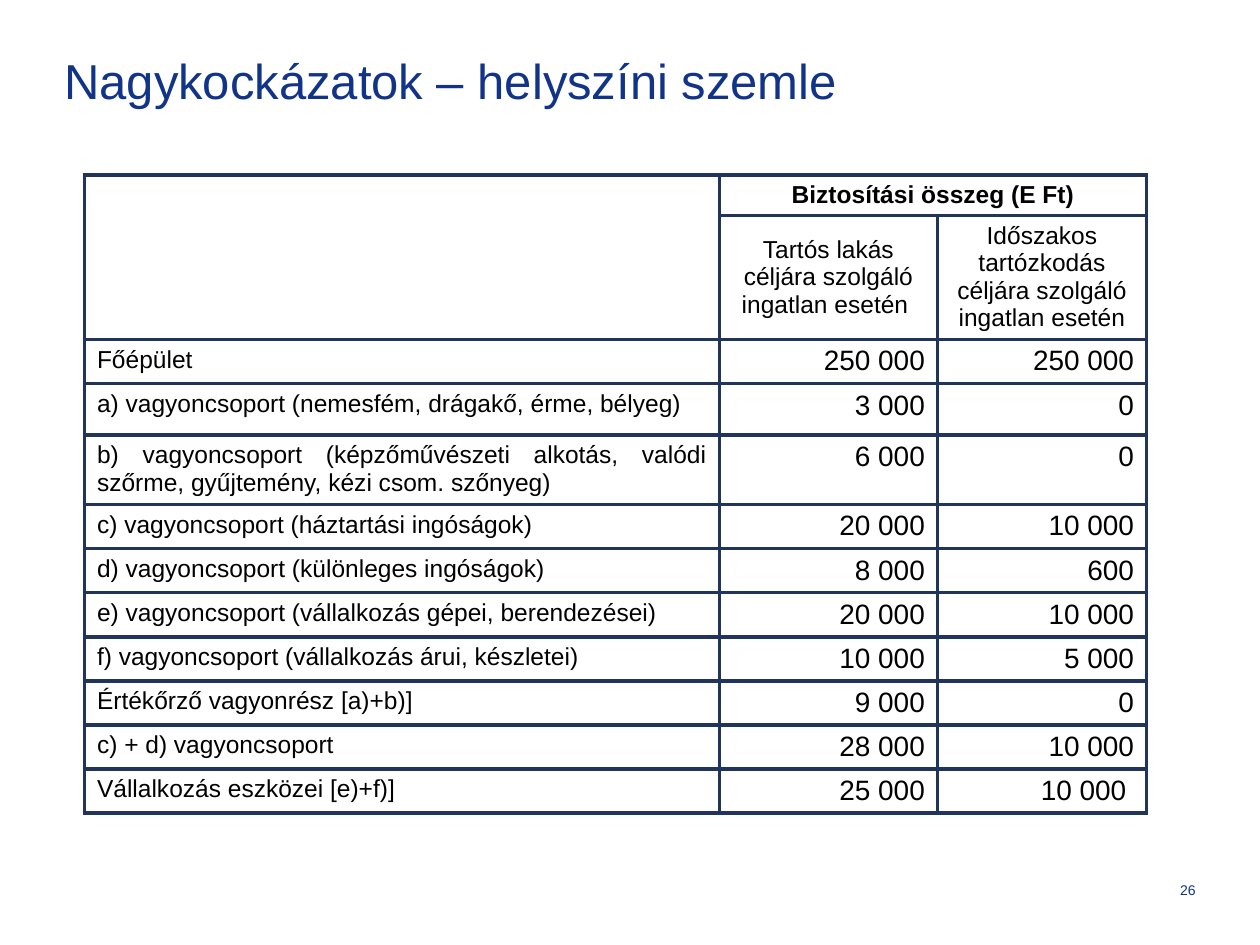
"""Build the slide on large risks and on-site inspection with its table of sums insured."""
from lxml import etree
from pptx import Presentation
from pptx import util as u
from pptx.dml import color
from pptx.enum import text
from pptx.oxml import ns

COLORS = {"heading": "113388", "body": "000000", "border": "21355A"}
ALIGN = text.PP_ALIGN
ANCHOR = text.MSO_ANCHOR


def write(frame, words, size, shade, align, bold=False):
    para = frame.paragraphs[0]
    para.alignment = align
    span = para.add_run()
    span.text = words
    span.font.name = "Arial"
    span.font.size = u.Pt(size)
    span.font.bold = bold
    span.font.color.rgb = color.RGBColor.from_string(COLORS[shade])


def add_borders(cell):
    props = cell._tc.get_or_add_tcPr()
    for index, side in enumerate(("lnL", "lnR", "lnT", "lnB")):
        line = etree.Element(ns.qn(f"a:{side}"), w=str(u.Pt(2.25)))
        fill = etree.SubElement(line, ns.qn("a:solidFill"))
        etree.SubElement(fill, ns.qn("a:srgbClr"), val=COLORS["border"])
        props.insert(index, line)


deck = Presentation()
deck.slide_width = u.Inches(10)
deck.slide_height = u.Inches(7.5)
page = deck.slides.add_slide(deck.slide_layouts[6])

labels = [
    ("Nagykockázatok – helyszíni szemle", 0.51, 0.38, 6.85, 0.51, 28, ALIGN.LEFT, ANCHOR.MIDDLE, 0),
    ("26", 7.17, 6.9, 2.32, 0.6, 8, ALIGN.RIGHT, ANCHOR.TOP, 0.1),
]
for words, left, top, width, height, size, align, anchor, inset in labels:
    box = page.shapes.add_textbox(*map(u.Inches, (left, top, width, height)))
    frame = box.text_frame
    frame.word_wrap = True
    frame.vertical_anchor = anchor
    frame.margin_left = frame.margin_right = frame.margin_bottom = 0
    frame.margin_top = u.Inches(inset)
    write(frame, words, size, "heading", align)

rows = [
    ("", "Biztosítási összeg (E Ft)", ""),
    ("", "Tartós lakás céljára szolgáló ingatlan esetén ",
     "Időszakos tartózkodás céljára szolgáló ingatlan esetén"),
    ("Főépület", "250 000", "250 000"),
    ("a) vagyoncsoport (nemesfém, drágakő, érme, bélyeg)", "3 000", "0"),
    ("b) vagyoncsoport (képzőművészeti alkotás, valódi szőrme, gyűjtemény, kézi csom. szőnyeg)",
     "6 000", "0"),
    ("c) vagyoncsoport (háztartási ingóságok)", "20 000", "10 000"),
    ("d) vagyoncsoport (különleges ingóságok)", "8 000", "600"),
    ("e) vagyoncsoport (vállalkozás gépei, berendezései)", "20 000", "10 000"),
    ("f) vagyoncsoport (vállalkozás árui, készletei)", "10 000", "5 000"),
    ("Értékőrző vagyonrész [a)+b)]", "9 000", "0"),
    ("c) + d) vagyoncsoport ", "28 000", "10 000"),
    ("Vállalkozás eszközei [e)+f)]", "25 000", "10 000 "),
]
column_widths = [5.04, 1.73, 1.66]
row_heights = [0.32, 0.98, 0.35, 0.41, 0.55] + [0.35] * 7
table = page.shapes.add_table(
    len(rows), len(column_widths), u.Inches(0.67), u.Inches(1.39),
    u.Inches(sum(column_widths)), u.Inches(sum(row_heights))).table
table.first_row = table.horz_banding = False
for column, width in zip(table.columns, column_widths):
    column.width = u.Inches(width)
for row, height in zip(table.rows, row_heights):
    row.height = u.Inches(height)
table.cell(0, 0).merge(table.cell(1, 0))
table.cell(0, 1).merge(table.cell(0, 2))

for row_index, row in enumerate(rows):
    for column_index, words in enumerate(row):
        cell = table.cell(row_index, column_index)
        cell.fill.background()
        cell.margin_bottom = u.Inches(0.02)
        add_borders(cell)
        if not words:
            para = cell.text_frame.paragraphs[0]
            etree.SubElement(para._p, ns.qn("a:endParaRPr"), sz="1400")
        elif row_index < 2:
            write(cell.text_frame, words, 14, "body", ALIGN.CENTER, bold=row_index == 0)
        elif column_index == 0:
            write(cell.text_frame, words, 14, "body", ALIGN.JUSTIFY)
        else:
            write(cell.text_frame, words, 16, "body", ALIGN.RIGHT)
table.cell(1, 1).vertical_anchor = ANCHOR.MIDDLE
table.cell(1, 1).margin_bottom = u.Inches(0.05)
table.cell(1, 2).margin_bottom = 0

deck.save("out.pptx")
